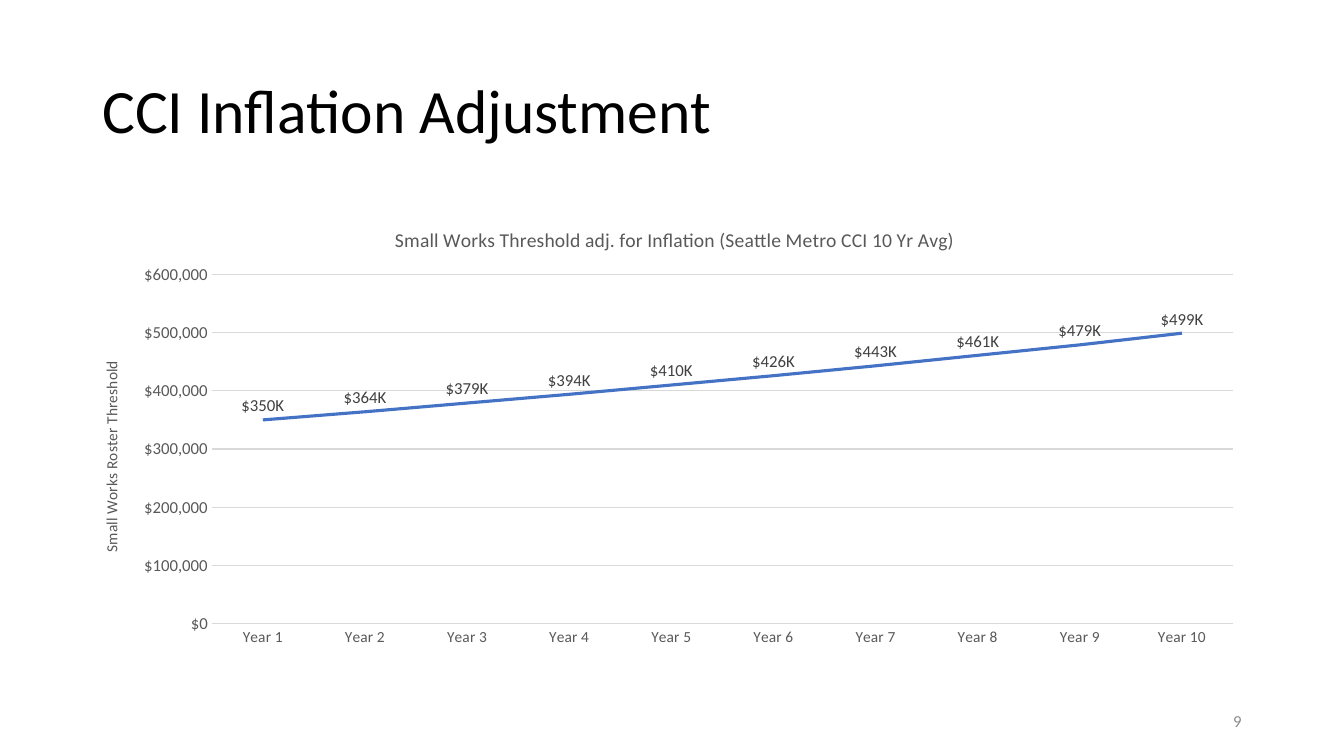
import pptx
import pptx.util
import pptx.chart.data
import pptx.dml.color
import pptx.enum.chart
import pptx.enum.text
import pptx.oxml
import pptx.oxml.ns

Pt = pptx.util.Pt
RGBColor = pptx.dml.color.RGBColor
qn = pptx.oxml.ns.qn
ANCHOR = pptx.enum.text.MSO_ANCHOR
ALIGN = pptx.enum.text.PP_ALIGN

BLACK = RGBColor(0x00, 0x00, 0x00)
DARK_GRAY = RGBColor(0x40, 0x40, 0x40)
GRAY = RGBColor(0x59, 0x59, 0x59)
NUMBER_GRAY = RGBColor(0x8C, 0x8C, 0x8C)
GRID_GRAY = RGBColor(0xD9, 0xD9, 0xD9)
BLUE = RGBColor(0x44, 0x72, 0xC4)
FONT = "Calibri"

YEARS = [f"Year {year}" for year in range(1, 11)]
THRESHOLDS = [thousands * 1000 for thousands in
              (350, 364, 379, 394, 410, 426, 443, 461, 479, 499)]


def style_font(font, size, color):
    font.name = FONT
    font.size = Pt(size)
    font.bold = False
    font.color.rgb = color


def write_text(frame, text, size=12, color=BLACK, align=None, spacing=None):
    paragraph = frame.paragraphs[0]
    paragraph.alignment = align
    paragraph.line_spacing = spacing
    run = paragraph.add_run()
    run.text = text
    style_font(run.font, size, color)


def place_part(element, target=None, **fractions):
    layout = element.find(qn("c:layout"))
    if layout is None:
        layout = pptx.oxml.parse_xml(f"<c:layout {pptx.oxml.ns.nsdecls('c')}/>")
        element.insert(0, layout)
    manual = layout.makeelement(qn("c:manualLayout"), {})
    layout.append(manual)
    settings = {"layoutTarget": target} if target else {}
    settings.update(xMode="edge", yMode="edge", **fractions)
    for tag, value in settings.items():
        manual.append(manual.makeelement(qn(f"c:{tag}"), {"val": str(value)}))


class SlideBuilder:
    def __init__(self, slide):
        self.slide = slide

    def text(self, text, left, top, width, height, **text_format):
        box = self.slide.shapes.add_textbox(Pt(left), Pt(top), Pt(width), Pt(height))
        box.text_frame.word_wrap = True
        box.text_frame.vertical_anchor = ANCHOR.MIDDLE
        write_text(box.text_frame, text, **text_format)

    def line_chart(self, title, axis_title, left, top, width, height):
        data = pptx.chart.data.CategoryChartData()
        data.categories = YEARS
        data.add_series("Series 1", THRESHOLDS)
        chart = self.slide.shapes.add_chart(
            pptx.enum.chart.XL_CHART_TYPE.LINE,
            Pt(left), Pt(top), Pt(width), Pt(height), data).chart
        style_font(chart.font, 10, BLACK)
        chart.has_legend = False
        write_text(chart.chart_title.text_frame, title, size=14, color=GRAY)
        place_part(chart.chart_title.element, x=0.258, y=0.045)
        place_part(chart.element.find(f".//{qn('c:plotArea')}"), "inner",
                   x=0.103, y=0.152, w=0.881, h=0.728)
        self.axes(chart, axis_title)
        self.series(chart.plots[0])

    def axes(self, chart, axis_title):
        years, amounts = chart.category_axis, chart.value_axis
        for axis, size in ((years, 11), (amounts, 12)):
            style_font(axis.tick_labels.font, size, GRAY)
            axis.major_tick_mark = pptx.enum.chart.XL_TICK_MARK.NONE
            axis.minor_tick_mark = pptx.enum.chart.XL_TICK_MARK.NONE
        for line in (years.format.line, amounts.major_gridlines.format.line):
            line.color.rgb = GRID_GRAY
            line.width = Pt(0.75)
        amounts.format.line.fill.background()
        amounts.minimum_scale = 0
        amounts.maximum_scale = 600000
        amounts.major_unit = 100000
        amounts.tick_labels.number_format = '"$"#,##0'
        amounts.tick_labels.number_format_is_linked = False
        write_text(amounts.axis_title.text_frame, axis_title, size=11, color=GRAY)
        place_part(amounts.axis_title.element, x=0.005, y=0.326)

    def series(self, plot):
        plot.vary_by_categories = False
        threshold = plot.series[0]
        threshold.smooth = False
        threshold.marker.style = pptx.enum.chart.XL_MARKER_STYLE.NONE
        threshold.format.line.color.rgb = BLUE
        threshold.format.line.width = Pt(2.25)
        labels = threshold.data_labels
        labels.show_value = True
        labels.position = pptx.enum.chart.XL_LABEL_POSITION.ABOVE
        labels.number_format = '"$"#,##0,\\K'
        labels.number_format_is_linked = False
        style_font(labels.font, 12, DARK_GRAY)


def main():
    deck = pptx.Presentation()
    deck.slide_width = Pt(960)
    deck.slide_height = Pt(540)
    page = SlideBuilder(deck.slides.add_slide(deck.slide_layouts[6]))
    page.text("CCI Inflation Adjustment", 66, 28.75, 828, 104.4, size=44, spacing=0.9)
    page.line_chart("Small Works Threshold adj. for Inflation (Seattle Metro CCI 10 Yr Avg)",
                    "Small Works Roster Threshold", 66, 144, 828, 342.6)
    page.text("9", 678, 500.5, 216, 28.75, color=NUMBER_GRAY, align=ALIGN.RIGHT)
    deck.save("out.pptx")


if __name__ == "__main__":
    main()
